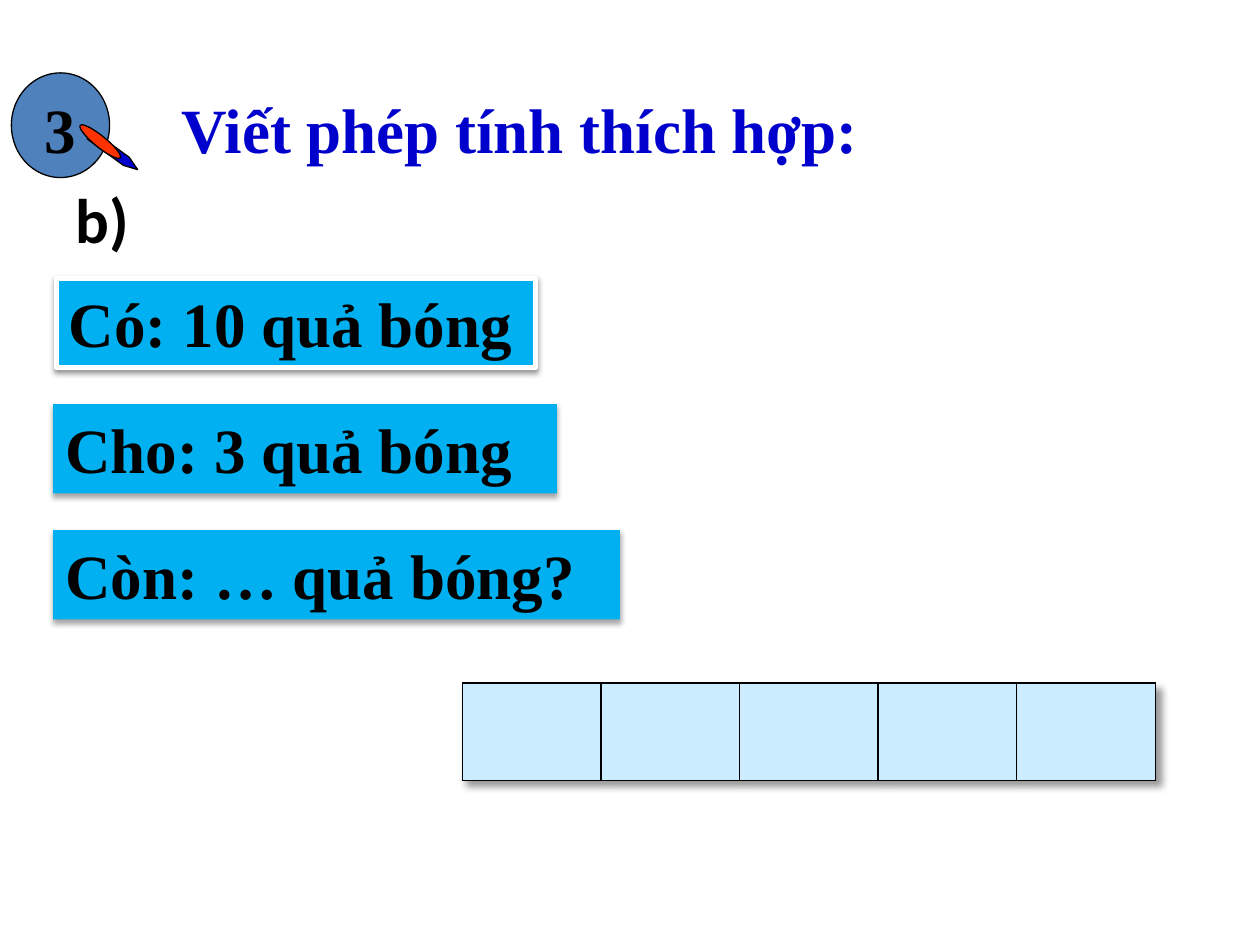
from dataclasses import dataclass

from lxml.etree import SubElement
from pptx import Presentation
from pptx.dml.color import RGBColor
from pptx.enum.shapes import MSO_SHAPE
from pptx.enum.text import MSO_ANCHOR, MSO_AUTO_SIZE, PP_ALIGN
from pptx.oxml.ns import qn
from pptx.util import Cm, Pt


@dataclass(frozen=True)
class Theme:
    ink: str = "000000"
    paper: str = "FFFFFF"
    badge: str = "4F81BD"
    title: str = "0000CC"
    pen: str = "FF3300"
    fact: str = "00B0F0"
    cell: str = "CCECFF"
    serif: str = "Times New Roman"
    sans: str = "Calibri"
    size: int = 36
    outline: float = 0.75
    frame: float = 3
    border: float = 1


T = Theme()


def rgb(value):
    return RGBColor.from_string(value)


def set_attrs(obj, values):
    for name, value in values.items():
        setattr(obj, name, value)


def write(sp, text, color=T.ink, font=T.serif):
    tf = sp.text_frame
    set_attrs(tf, {"word_wrap": True, "vertical_anchor": MSO_ANCHOR.TOP,
                   "auto_size": MSO_AUTO_SIZE.SHAPE_TO_FIT_TEXT})
    p = tf.paragraphs[0]
    p.alignment = PP_ALIGN.LEFT
    r = p.add_run()
    r.text = text
    set_attrs(r.font, {"name": font, "size": Pt(T.size), "bold": True})
    r.font.color.rgb = rgb(color)


def add_label(shapes, box, text, color=T.ink, font=T.serif):
    write(shapes.add_textbox(*map(Cm, box)), text, color, font)


def add_filled(shapes, kind, box, fill, line=None, weight=T.outline, rotation=0):
    sp = shapes.add_shape(kind, *map(Cm, box))
    set_attrs(sp, {"rotation": rotation})
    sp.shadow.inherit = False
    sp.fill.solid()
    sp.fill.fore_color.rgb = rgb(fill)
    if line:
        sp.line.color.rgb = rgb(line)
        sp.line.width = Pt(weight)
    else:
        sp.line.fill.background()
    return sp


def add_shadow(effects, alpha, blur, dist, angle):
    shadow = SubElement(effects, qn("a:outerShdw"), {
        "blurRad": str(Pt(blur)), "dist": str(Pt(dist)),
        "dir": str(angle * 60000), "algn": "tl", "rotWithShape": "0"})
    color = SubElement(shadow, qn("a:srgbClr"), val=T.ink)
    SubElement(color, qn("a:alpha"), val=str(alpha * 1000))


def add_header(s, x, y):
    shapes = s.shapes.add_group_shape().shapes
    add_filled(shapes, MSO_SHAPE.OVAL, (x, y, 1.98, 2.11), T.badge, T.ink)
    add_label(shapes, (x + 0.41, y + 0.23, 0.84, 1.8), "3")
    add_label(shapes, (x + 3.18, y + 0.23, 14.81, 1.8),
              "Viết phép tính thích hợp:", T.title)
    tip = add_filled(shapes, MSO_SHAPE.PENTAGON, (x + 1.47, y + 1.5, 1.19, 0.2),
                     T.title, T.ink, rotation=36.1)
    tip.adjustments[0] = 1.42
    add_filled(shapes, MSO_SHAPE.OVAL, (x + 1.27, y + 1.27, 1.04, 0.23),
               T.pen, T.ink, rotation=39.1)


def add_facts(s, x, y, step, height):
    facts = (
        ("Có: 10 quả bóng", 0.07, 9.65, T.paper, 38, 1.6),
        ("Cho: 3 quả bóng", 0, 10.16, None, 35, 1.8),
        ("Còn: … quả bóng?", 0, 11.43, None, 35, 1.8),
    )
    for i, (text, indent, width, line, alpha, dist) in enumerate(facts):
        box = (x + indent, y + i * step, width, height)
        sp = add_filled(s.shapes, MSO_SHAPE.RECTANGLE, box, T.fact, line, T.frame)
        write(sp, text)
        add_shadow(sp._element.spPr.find(qn("a:effectLst")), alpha, 3.1, dist, 90)


def add_borders(cell):
    tcPr = cell._tc.get_or_add_tcPr()
    for i, side in enumerate(("lnL", "lnR", "lnT", "lnB")):
        ln = SubElement(tcPr, qn(f"a:{side}"), w=str(Pt(T.border)))
        SubElement(SubElement(ln, qn("a:solidFill")), qn("a:srgbClr"), val=T.ink)
        tcPr.insert(i, ln)


def add_answer_grid(s, x, y, width, height, count):
    table = s.shapes.add_table(1, count, *map(Cm, (x, y, width, height))).table
    set_attrs(table, {"first_row": False, "horz_banding": False})
    tblPr = table._tbl.tblPr
    effects = SubElement(tblPr, qn("a:effectLst"))
    tblPr.insert(0, effects)
    add_shadow(effects, 40, 4, 4, 45)
    for col in table.columns:
        col.width = Cm(width / count)
    for cell in table.iter_cells():
        cell.fill.solid()
        cell.fill.fore_color.rgb = rgb(T.cell)
        add_borders(cell)


def main():
    prs = Presentation()
    set_attrs(prs, {"slide_width": Cm(25.4), "slide_height": Cm(19.05)})
    s = prs.slides.add_slide(prs.slide_layouts[6])
    add_header(s, 0.23, 1.47)
    add_facts(s, 1.07, 5.61, 2.54, 1.8)
    add_answer_grid(s, 9.32, 13.77, 13.97, 1.96, 5)
    add_label(s.shapes, (1.27, 3.51, 2.13, 1.8), "b)", font=T.sans)
    prs.save("out.pptx")


if __name__ == "__main__":
    main()
